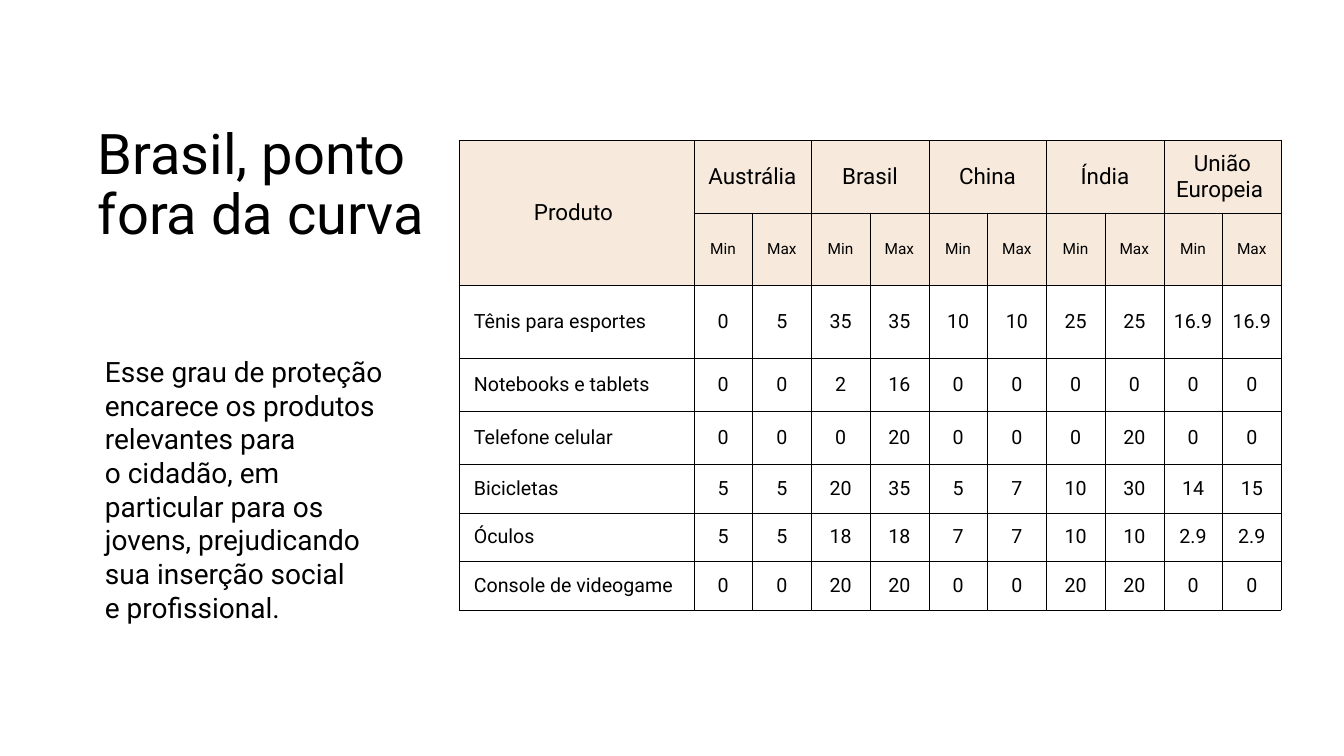
from lxml import etree
from pptx import Presentation
from pptx.dml.color import RGBColor
from pptx.enum import text
from pptx.oxml import ns
from pptx.util import Inches, Pt

FONT = "Roboto"
COLORS = {"ink": "000000", "paper": "FFFFFF", "header": "CA6C18"}
HEADER_ALPHA = 15
TABLE_WIDTH = 8.16
PRODUCT_WIDTH = 2.33
ROW_HEIGHTS = [0.72] * 3 + [0.53] * 2 + [0.48] * 3
REGIONS = ["Austrália", "Brasil", "China", "Índia", "União Europeia "]
TARIFFS = [
    ("Tênis para esportes", "0 5 35 35 10 10 25 25 16.9 16.9"),
    ("Notebooks e tablets", "0 0 2 16 0 0 0 0 0 0"),
    ("Telefone celular", "0 0 0 20 0 0 0 20 0 0"),
    ("Bicicletas", "5 5 20 35 5 7 10 30 14 15"),
    ("Óculos", "5 5 18 18 7 7 10 10 2.9 2.9"),
    ("Console de videogame", "0 0 20 20 0 0 20 20 0 0"),
]
TITLE = "Brasil, ponto fora da curva"
MESSAGE = ("Esse grau de proteção encarece os produtos relevantes para \v"
           "o cidadão, em \vparticular para os \vjovens, prejudicando \v"
           "sua inserção social \ve profissional.")


def format_runs(p, size):
    for r in p.runs:
        r.font.name = FONT
        r.font.size = Pt(size)
        r.font.bold = False
        r.font.color.rgb = RGBColor.from_string(COLORS["ink"])


def add_text(s, left, top, width, height, words, size, spacing=1.0):
    tf = s.shapes.add_textbox(Inches(left), Inches(top),
                              Inches(width), Inches(height)).text_frame
    tf.word_wrap = True
    tf.margin_left = tf.margin_right = Inches(0.05)
    tf.margin_top = tf.margin_bottom = Inches(0.05)
    p = tf.paragraphs[0]
    p.text = words
    p.line_spacing = spacing
    format_runs(p, size)


def set_borders(cell):
    tcPr = cell._tc.get_or_add_tcPr()
    for i, side in enumerate(("lnL", "lnR", "lnT", "lnB")):
        ln = etree.Element(ns.qn(f"a:{side}"), w=str(Pt(0.25)))
        fill = etree.SubElement(ln, ns.qn("a:solidFill"))
        etree.SubElement(fill, ns.qn("a:srgbClr"), val=COLORS["ink"])
        tcPr.insert(i, ln)


def style_cell(cell, is_header):
    cell.margin_left = cell.margin_right = 0
    cell.margin_top = cell.margin_bottom = 0
    cell.vertical_anchor = text.MSO_ANCHOR.MIDDLE
    cell.fill.solid()
    color = COLORS["header" if is_header else "paper"]
    cell.fill.fore_color.rgb = RGBColor.from_string(color)
    if is_header:
        clr = cell._tc.tcPr.find(".//" + ns.qn("a:srgbClr"))
        etree.SubElement(clr, ns.qn("a:alpha"), val=str(HEADER_ALPHA * 1000))
    set_borders(cell)


def write_cell(cell, words, size, indent=None):
    p = cell.text_frame.paragraphs[0]
    p.text = words
    if indent is None:
        p.alignment = text.PP_ALIGN.CENTER
    else:
        pPr = p._p.get_or_add_pPr()
        pPr.set("marL", "0")
        pPr.set("indent", str(Inches(indent)))
    format_runs(p, size)


def add_tariff_table(s, left, top):
    columns = 1 + 2 * len(REGIONS)
    table = s.shapes.add_table(len(ROW_HEIGHTS), columns, Inches(left), Inches(top),
                               Inches(TABLE_WIDTH), Inches(sum(ROW_HEIGHTS))).table
    table.first_row = table.horz_banding = False
    value_width = (TABLE_WIDTH - PRODUCT_WIDTH) / (columns - 1)
    for c, column in enumerate(table.columns):
        column.width = Inches(value_width if c else PRODUCT_WIDTH)
    for r, height in enumerate(ROW_HEIGHTS):
        table.rows[r].height = Inches(height)
        for c in range(columns):
            style_cell(table.cell(r, c), r < 2)

    table.cell(0, 0).merge(table.cell(1, 0))
    write_cell(table.cell(0, 0), "Produto ", 16)
    for i, region in enumerate(REGIONS):
        c = 1 + 2 * i
        table.cell(0, c).merge(table.cell(0, c + 1))
        write_cell(table.cell(0, c), region, 16)
        write_cell(table.cell(1, c), "Min", 11)
        write_cell(table.cell(1, c + 1), "Max", 11)
    for r, (product, rates) in enumerate(TARIFFS, 2):
        write_cell(table.cell(r, 0), product, 14, indent=0.15)
        for c, rate in enumerate(rates.split(), 1):
            write_cell(table.cell(r, c), rate, 14)


def main():
    prs = Presentation()
    prs.slide_width = Inches(13.33)
    prs.slide_height = Inches(7.5)
    s = prs.slides.add_slide(prs.slide_layouts[6])
    add_text(s, 0.99, 3.47, 3.22, 2.79, MESSAGE, 20)
    add_text(s, 0.92, 1.2, 3.37, 2.29, TITLE, 40, spacing=0.9)
    add_tariff_table(s, 4.55, 1.39)
    prs.save("out.pptx")


if __name__ == "__main__":
    main()
